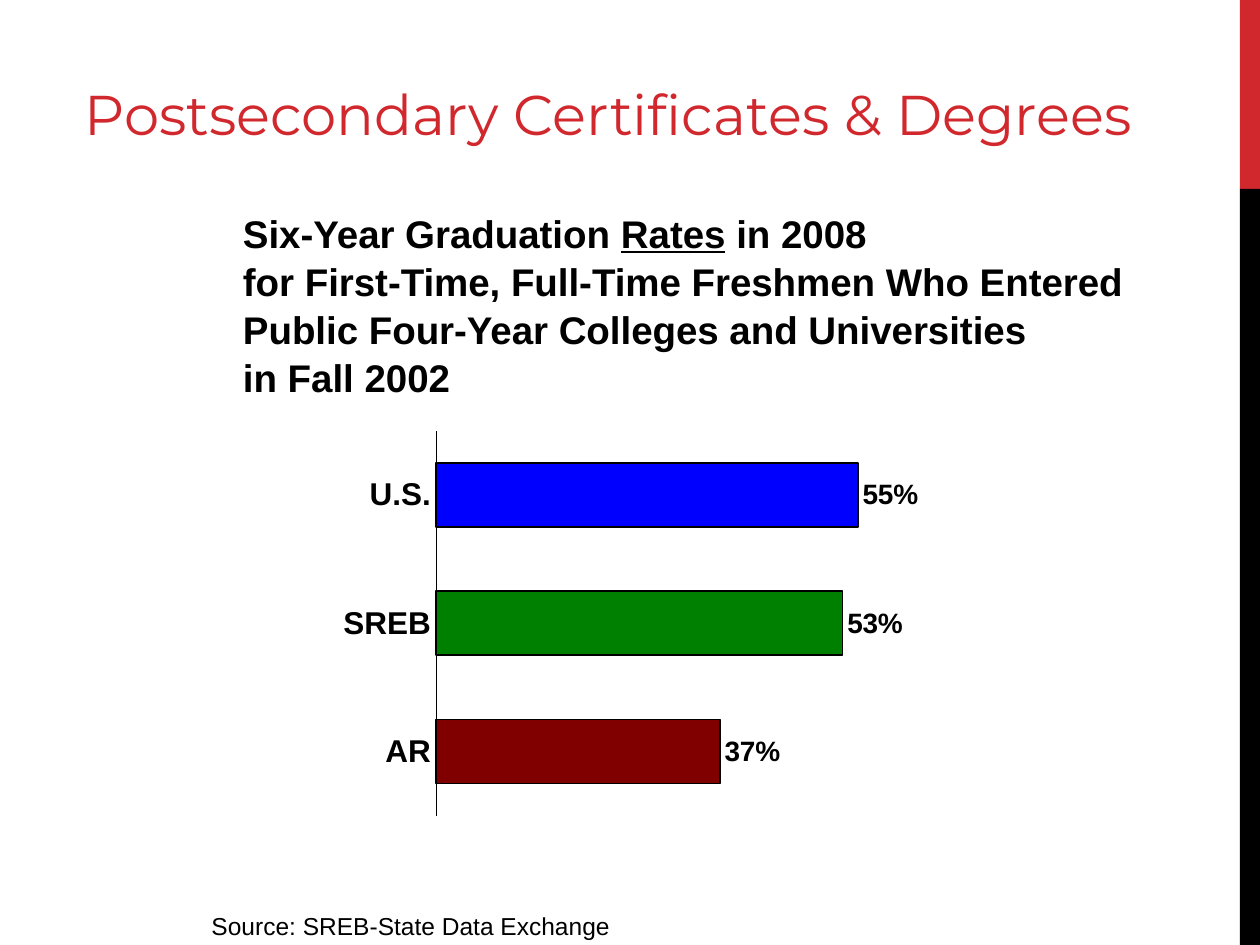
import pptx
import pptx.chart.data
import pptx.dml.color
import pptx.enum.chart
import pptx.enum.shapes
import pptx.enum.text
import pptx.oxml
import pptx.util
from pptx.util import Inches, Pt

COLORS = {"red": "D1282E", "black": "000000", "maroon": "800000",
          "green": "008000", "blue": "0000FF"}
TITLE = "Postsecondary Certificates & Degrees"
HEADING = [
    [("Six-Year Graduation ", False), ("Rates", True), (" in 2008", False)],
    [("for First-Time, Full-Time Freshmen Who Entered", False)],
    [("Public Four-Year Colleges and Universities", False)],
    [("in Fall 2002", False)],
]
SOURCE = "Source: SREB-State Data Exchange"
RATES = [("AR", 0.37, "maroon"), ("SREB", 0.53, "green"), ("U.S.", 0.55, "blue")]
SIDEBAR = [("red", 1.5), ("black", 6)]
PLOT_AREA = {"x": 0.145, "y": 0.033, "w": 0.841, "h": 0.935}


def rgb(name):
    """Return the named palette colour."""
    return pptx.dml.color.RGBColor.from_string(COLORS[name])


def style(font, size, bold=False, color="black", face="Arial"):
    """Set the look of a font."""
    font.size, font.bold, font.name = Pt(size), bold, face
    font.color.rgb = rgb(color)


def add_sidebar(slide):
    """Stack the coloured blocks down the right edge."""
    top = 0
    for color, height in SIDEBAR:
        block = slide.shapes.add_shape(
            pptx.enum.shapes.MSO_SHAPE.RECTANGLE,
            Inches(9.84), Inches(top), Inches(0.16), Inches(height))
        block.shadow.inherit = False
        block.fill.solid()
        block.fill.fore_color.rgb = rgb(color)
        block.line.fill.background()
        top += height


def add_title(slide):
    """Place and format the slide title."""
    title = slide.shapes.title
    title.left, title.top = Inches(-0.17), Inches(0.58)
    title.width, title.height = Inches(10), Inches(0.92)
    title.text_frame.text = TITLE
    title.text_frame.auto_size = pptx.enum.text.MSO_AUTO_SIZE.NONE
    title.text_frame.vertical_anchor = pptx.enum.text.MSO_ANCHOR.TOP
    paragraph = title.text_frame.paragraphs[0]
    paragraph.alignment = pptx.enum.text.PP_ALIGN.CENTER
    style(paragraph.font, 32, color="red", face="Montserrat")


def add_text(slide, box, lines, size, bold=False, spacing=1.0):
    """Add a wrapped text box with one paragraph per line."""
    frame = slide.shapes.add_textbox(*map(Inches, box)).text_frame
    frame.word_wrap = True
    for index, line in enumerate(lines):
        paragraph = frame.add_paragraph() if index else frame.paragraphs[0]
        paragraph.line_spacing = spacing
        style(paragraph.font, size, bold)
        for words, underlined in line:
            run = paragraph.add_run()
            run.text = words
            if underlined:
                run.font.underline = True


def add_rates_chart(slide):
    """Add the bar chart of graduation rates."""
    data = pptx.chart.data.CategoryChartData(number_format="0%")
    data.categories = [region for region, _, _ in RATES]
    data.add_series("Series 1", [rate for _, rate, _ in RATES])
    chart = slide.shapes.add_chart(
        pptx.enum.chart.XL_CHART_TYPE.BAR_CLUSTERED,
        Inches(2.41), Inches(3.31), Inches(7.24), Inches(3.27), data).chart
    chart.has_legend = chart.has_title = False
    style(chart.font, 13.2, True)

    regions, scale = chart.category_axis, chart.value_axis
    for axis in (regions, scale):
        axis.has_major_gridlines = False
        axis.major_tick_mark = pptx.enum.chart.XL_TICK_MARK.NONE
        axis.minor_tick_mark = pptx.enum.chart.XL_TICK_MARK.NONE
    style(regions.tick_labels.font, 18, True)
    regions.format.line.color.rgb = rgb("black")
    regions.format.line.width = Pt(0.25)
    scale.minimum_scale, scale.maximum_scale = 0, 1
    scale.tick_label_position = pptx.enum.chart.XL_TICK_LABEL_POSITION.NONE
    scale.format.line.fill.background()

    plot = chart.plots[0]
    plot.gap_width = 100
    plot.vary_by_categories = False
    bars = plot.series[0]
    bars.format.fill.solid()
    bars.format.fill.fore_color.rgb = rgb(RATES[0][2])
    for index, (_, _, color) in enumerate(RATES):
        bar = bars.points[index].format
        bar.fill.solid()
        bar.fill.fore_color.rgb = rgb(color)
        bar.line.color.rgb = rgb("black")
        bar.line.width = Pt(1)
    labels = bars.data_labels
    labels.show_value = True
    labels.number_format, labels.number_format_is_linked = "0%", False
    labels.position = pptx.enum.chart.XL_LABEL_POSITION.OUTSIDE_END
    style(labels.font, 16, True)
    set_plot_area(chart)


def set_plot_area(chart):
    """Fix the inner plot area as fractions of the chart."""
    settings = [("layoutTarget", "inner"), ("xMode", "edge"), ("yMode", "edge")]
    settings += PLOT_AREA.items()
    children = "".join(f'<c:{tag} val="{value}"/>' for tag, value in settings)
    namespace = "http://schemas.openxmlformats.org/drawingml/2006/chart"
    layout = pptx.oxml.parse_xml(
        f'<c:layout xmlns:c="{namespace}"><c:manualLayout>{children}'
        '</c:manualLayout></c:layout>')
    plot_area = chart.element.chart.plotArea
    for previous in plot_area.findall(f"{{{namespace}}}layout"):
        plot_area.remove(previous)
    plot_area.insert(0, layout)


def main():
    """Build the graduation rates slide."""
    deck = pptx.Presentation()
    deck.slide_width, deck.slide_height = Inches(10), Inches(7.5)
    slide = deck.slides.add_slide(deck.slide_layouts.get_by_name("Title Only"))
    add_sidebar(slide)
    add_rates_chart(slide)
    add_text(slide, (1.83, 1.6, 7.58, 1.95), HEADING, 22, True, 1.04)
    add_title(slide)
    add_text(slide, (1.58, 7.18, 6.28, 0.33), [[(SOURCE, False)]], 14)
    deck.save("out.pptx")


if __name__ == "__main__":
    main()
